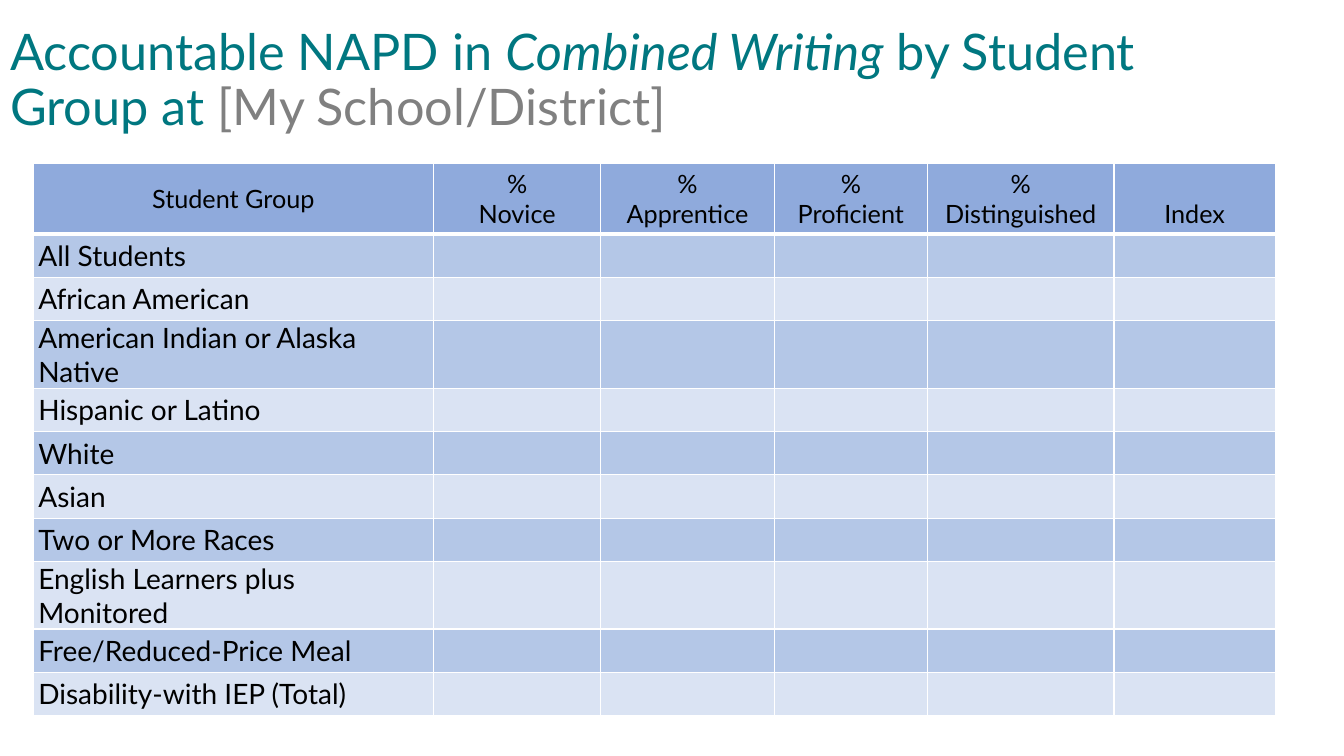
from lxml.etree import SubElement
from pptx import Presentation
from pptx.dml.color import RGBColor
from pptx.enum.text import MSO_ANCHOR, MSO_AUTO_SIZE, PP_ALIGN
from pptx.oxml.ns import qn
from pptx.util import Inches, Pt

# Content
TITLE = [
    ("Accountable NAPD in ", {"color": "teal"}),
    ("Combined Writing", {"color": "teal", "italic": True}),
    (" by Student Group at", {"color": "teal"}),
    (" [My School/District]", {"color": "gray"}),
]
HEADERS = [
    ["Student Group"],
    ["%", "Novice"],
    ["%", "Apprentice"],
    ["%", "Proficient"],
    ["%", "Distinguished"],
    ["Index"],
]
GROUPS = [
    "All Students",
    "African American",
    "American Indian or Alaska Native",
    "Hispanic or Latino",
    "White",
    "Asian",
    "Two or More Races",
    "English Learners plus Monitored",
    "Free/Reduced-Price Meal",
    "Disability-with IEP (Total)",
]
TWO_LINE_GROUPS = {"American Indian or Alaska Native", "English Learners plus Monitored"}

# Theme and measures
THEME = {
    "font": "Lato",
    "teal": "007780", "gray": "808080", "text": "000000", "line": "FFFFFF",
    "header": "8FAADC", "bands": ("B4C7E7", "DAE3F3"),
    "title_size": 36, "header_size": 18, "group_size": 20,
}
COLUMN_WIDTHS = [3.97, 1.66, 1.72, 1.52, 1.85, 1.6]
HEADER_HEIGHT, ROW_HEIGHT, TWO_LINE_HEIGHT = 0.65, 0.43, 0.61
GROUP_MARGINS = {"margin_left": 0.05, "margin_right": 0.05, "margin_top": 0, "margin_bottom": 0}


def add_span(para, text, size, color="text", italic=False):
    span = para.add_run()
    span.text = text
    formats = {"name": THEME["font"], "size": Pt(size), "italic": italic}
    for name, value in formats.items():
        setattr(span.font, name, value)
    span.font.color.rgb = RGBColor.from_string(THEME[color])


def style_cell(cell, fill, bottom_width=1):
    properties = cell._tc.get_or_add_tcPr()
    for side in ("lnL", "lnR", "lnT", "lnB"):
        width = bottom_width if side == "lnB" else 1
        line = SubElement(properties, qn(f"a:{side}"), w=str(Pt(width)))
        paint = SubElement(line, qn("a:solidFill"))
        SubElement(paint, qn("a:srgbClr"), val=THEME["line"])
    cell.fill.solid()
    cell.fill.fore_color.rgb = RGBColor.from_string(fill)
    cell.vertical_anchor = MSO_ANCHOR.MIDDLE


def add_title(page):
    title = page.shapes.title
    box = {"left": 0, "top": 0, "width": 12.57, "height": 1.62}
    for name, value in box.items():
        setattr(title, name, Inches(value))
    frame = title.text_frame
    frame.auto_size = MSO_AUTO_SIZE.NONE
    frame.vertical_anchor = MSO_ANCHOR.MIDDLE
    para = frame.paragraphs[0]
    para.alignment = PP_ALIGN.LEFT
    para.line_spacing = 0.9
    for text, formats in TITLE:
        add_span(para, text, THEME["title_size"], **formats)


def add_group_table(page):
    heights = [HEADER_HEIGHT] + [
        TWO_LINE_HEIGHT if group in TWO_LINE_GROUPS else ROW_HEIGHT for group in GROUPS
    ]
    table = page.shapes.add_table(
        len(heights), len(HEADERS), Inches(0.33), Inches(1.62),
        Inches(sum(COLUMN_WIDTHS)), Inches(sum(heights)),
    ).table
    for column, width in zip(table.columns, COLUMN_WIDTHS):
        column.width = Inches(width)
    for row, height in zip(table.rows, heights):
        row.height = Inches(height)

    # Header row
    for column, lines in enumerate(HEADERS):
        cell = table.cell(0, column)
        style_cell(cell, THEME["header"], bottom_width=3)
        frame = cell.text_frame
        for number, text in enumerate(lines):
            para = frame.add_paragraph() if number else frame.paragraphs[0]
            para.alignment = PP_ALIGN.CENTER
            add_span(para, text, THEME["header_size"])
    table.cell(0, len(HEADERS) - 1).vertical_anchor = MSO_ANCHOR.BOTTOM

    # Banded rows, one for each student group
    for number, group in enumerate(GROUPS):
        row = number + 1
        for column in range(len(HEADERS)):
            style_cell(table.cell(row, column), THEME["bands"][number % 2])
        label = table.cell(row, 0)
        for name, value in GROUP_MARGINS.items():
            setattr(label, name, Inches(value))
        add_span(label.text_frame.paragraphs[0], group, THEME["group_size"])


def main():
    deck = Presentation()
    deck.slide_width, deck.slide_height = Inches(13.33), Inches(7.5)
    page = deck.slides.add_slide(deck.slide_layouts[5])
    add_title(page)
    add_group_table(page)
    deck.save("out.pptx")


if __name__ == "__main__":
    main()
